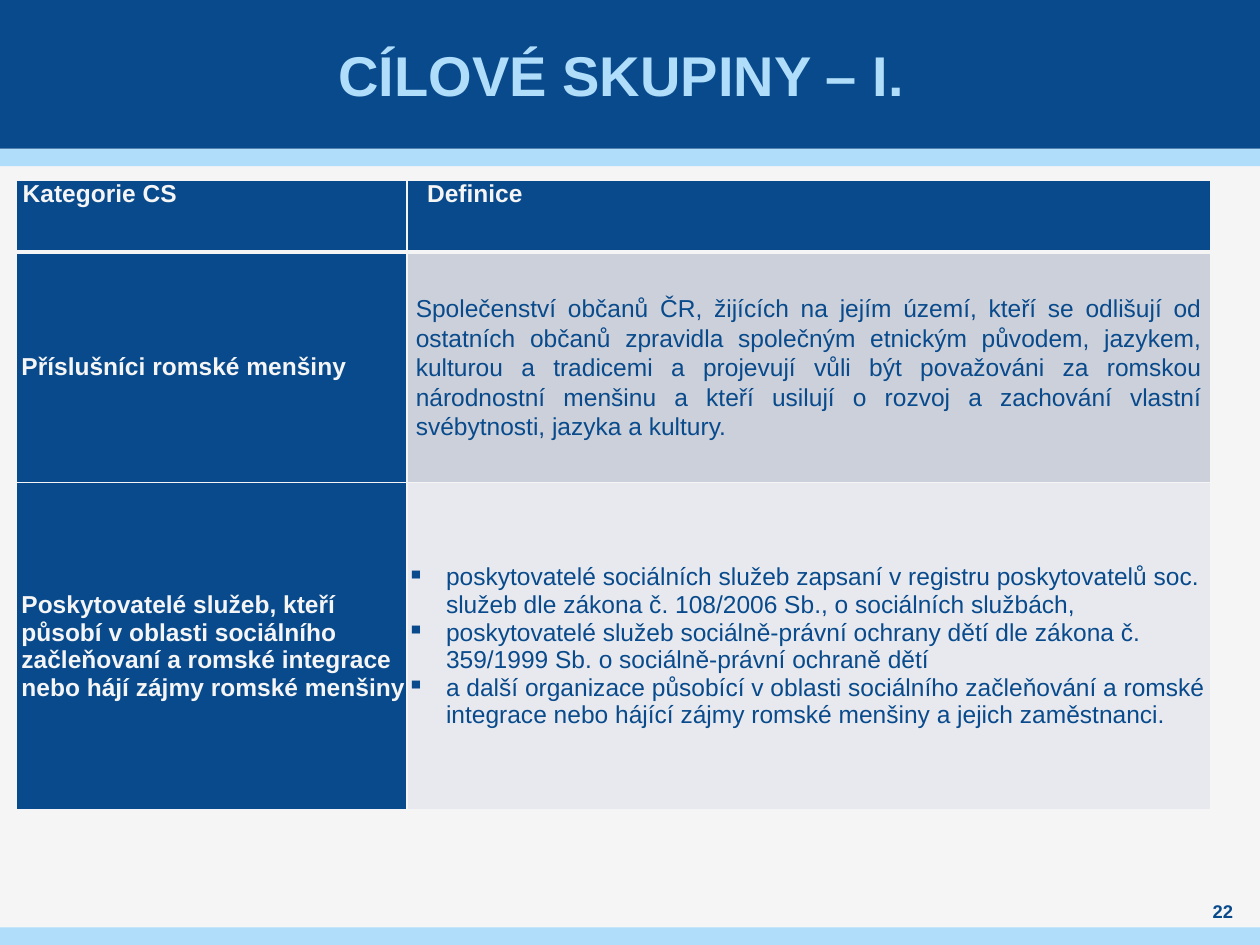
"""Build the slide that defines the target groups in a table."""
import pptx
import pptx.dml.color
import pptx.enum.shapes
import pptx.enum.text
import pptx.oxml
import pptx.oxml.ns
import pptx.util
from pptx.util import Inches

Pt = pptx.util.Pt
ALIGN = pptx.enum.text.PP_ALIGN
MIDDLE = pptx.enum.text.MSO_ANCHOR.MIDDLE
TOP = pptx.enum.text.MSO_ANCHOR.TOP
HUES = {"navy": "084A8B", "sky": "AFDDFA", "pale": "F5F5F5",
        "gray": "CCD0DA", "light": "E7E9EE"}


def paint(fill, hue):
    fill.solid()
    fill.fore_color.rgb = pptx.dml.color.RGBColor.from_string(HUES[hue])


def write(para, text, size, hue, bold):
    run = para.add_run()
    run.text = text
    run.font.name = "Arial"
    run.font.size = Pt(size)
    run.font.bold = bold
    run.font.color.rgb = pptx.dml.color.RGBColor.from_string(HUES[hue])


deck = pptx.Presentation()
deck.slide_width, deck.slide_height = Inches(10), Inches(7.5)
slide = deck.slides.add_slide(deck.slide_layouts[6])
paint(slide.background.fill, "pale")

for top, high, hue in [(1.18, 0.14, "sky"), (0, 1.18, "navy"), (7.36, 0.14, "sky")]:
    band = slide.shapes.add_shape(pptx.enum.shapes.MSO_SHAPE.RECTANGLE,
                                  0, Inches(top), Inches(10), Inches(high))
    band.shadow.inherit = False
    paint(band.fill, hue)
    band.line.fill.background()

labels = [
    ("CÍLOVÉ SKUPINY – I. ", (0.39, 0, 9.21, 1.18), 0.04, 32, "sky"),
    ("22", (9.45, 7.13, 0.51, 0.2), 0, 10.5, "navy"),
]
for text, place, inset, size, hue in labels:
    frame = slide.shapes.add_textbox(*map(Inches, place)).text_frame
    frame.word_wrap = True
    frame.vertical_anchor = MIDDLE
    frame.margin_left = frame.margin_right = Inches(inset)
    frame.margin_top = frame.margin_bottom = 0
    frame.paragraphs[0].alignment = ALIGN.CENTER
    write(frame.paragraphs[0], text, size, hue, True)

rows = [
    (["Kategorie CS"], ["Definice"]),
    (["Příslušníci romské menšiny"],
     ["Společenství občanů ČR, žijících na jejím území, kteří se odlišují od "
      "ostatních občanů zpravidla společným etnickým původem, jazykem, kulturou "
      "a tradicemi a projevují vůli být považováni za romskou národnostní menšinu "
      "a kteří usilují o rozvoj a zachování vlastní svébytnosti, jazyka a kultury."]),
    (["Poskytovatelé služeb, kteří působí v oblasti sociálního začleňovaní "
      "a romské integrace nebo hájí zájmy romské menšiny"],
     ["poskytovatelé sociálních služeb zapsaní v registru poskytovatelů soc. služeb "
      "dle zákona č. 108/2006 Sb., o sociálních službách,",
      "poskytovatelé služeb sociálně-právní ochrany dětí dle zákona č. 359/1999 Sb. "
      "o sociálně-právní ochraně dětí",
      "a další organizace působící v oblasti sociálního začleňování a romské integrace "
      "nebo hájící zájmy romské menšiny a jejich zaměstnanci."]),
]
fills = [("navy", "navy"), ("navy", "gray"), ("navy", "light")]
dents = [(0.05, 0.16), (0.04, 0), (0.04, 0.31)]

table = slide.shapes.add_table(3, 2, Inches(0.13), Inches(1.43),
                               Inches(9.48), Inches(5)).table
for col, wide in zip(table.columns, (3.1, 6.38)):
    col.width = Inches(wide)
for row, high in zip(table.rows, (0.57, 1.83, 2.6)):
    row.height = Inches(high)

for r, row in enumerate(rows):
    for c, texts in enumerate(row):
        cell = table.cell(r, c)
        body = (r, c) == (1, 1)
        listed = (r, c) == (2, 1)
        cell.vertical_anchor = MIDDLE if r else TOP
        cell.margin_left = cell.margin_right = Inches(0.07 if body else 0)
        cell.margin_top = cell.margin_bottom = 0
        edges = {"L": 1, "R": 1, "T": 3 if r == 1 else 1, "B": 1 if r else 3}
        for side, width in edges.items():
            cell._tc.get_or_add_tcPr().append(pptx.oxml.parse_xml(
                f'<a:ln{side} {pptx.oxml.ns.nsdecls("a")} w="{Pt(width)}"><a:solidFill>'
                f'<a:srgbClr val="{HUES["pale"]}"/></a:solidFill></a:ln{side}>'))
        paint(cell.fill, fills[r][c])
        plain = r > 0 and c == 1
        for n, text in enumerate(texts):
            frame = cell.text_frame
            para = frame.add_paragraph() if n else frame.paragraphs[0]
            props = para._p.get_or_add_pPr()
            props.set("marL", str(Inches(dents[r][c])))
            props.set("indent", str(-Inches(dents[r][c]) if listed else 0))
            if listed:
                props.append(pptx.oxml.parse_xml(
                    f'<a:buChar {pptx.oxml.ns.nsdecls("a")} char="▪"/>'))
            elif c == 1:
                para.alignment = ALIGN.JUSTIFY
            if body:
                para.line_spacing = 1.07
                para.space_after = Pt(8)
            write(para, text, 14, "navy" if plain else "pale", not plain)

deck.save("out.pptx")
